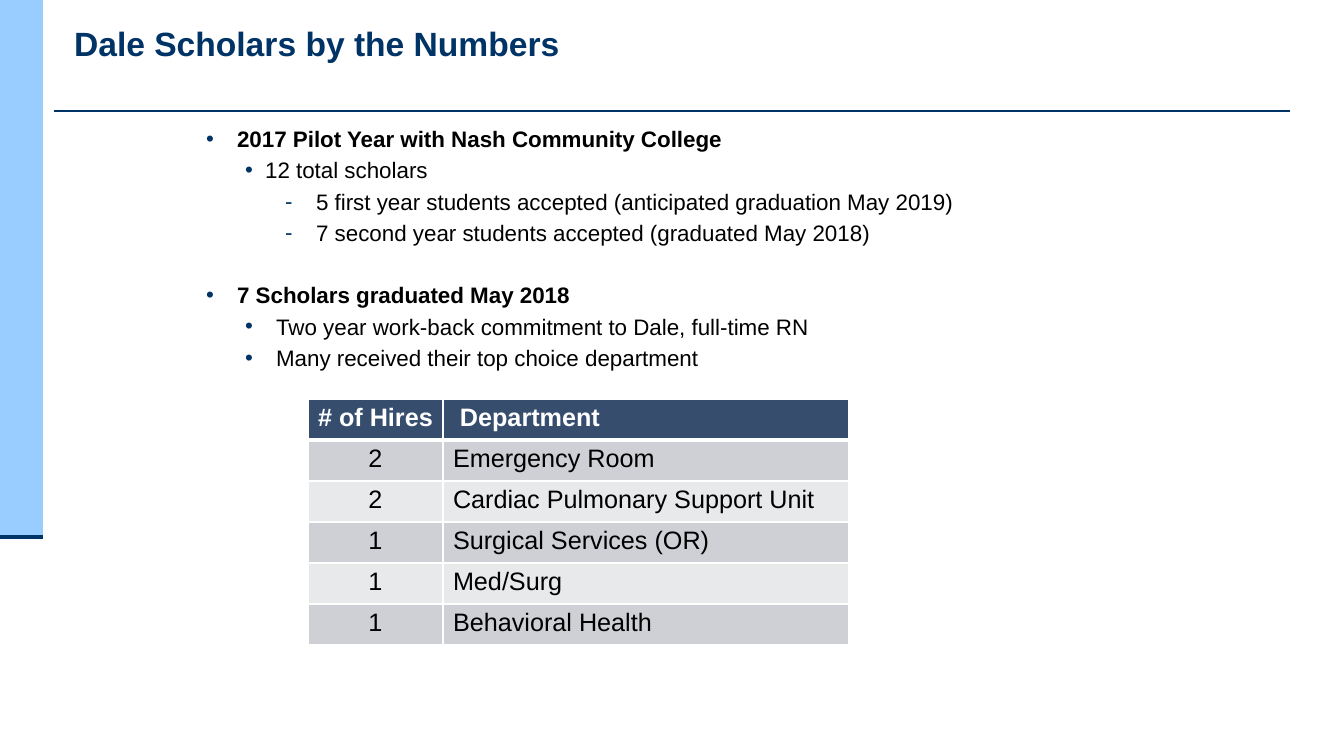
import pptx
import pptx.util
import pptx.dml.color
import pptx.enum.shapes
import pptx.enum.text
from lxml import etree
from dataclasses import dataclass

TITLE = "Dale Scholars by the Numbers"
# kind of line, text, space before in points
POINTS = [
    ("head", "2017 Pilot Year with Nash Community College", 0),
    ("total", "12 total scholars", 3.3),
    ("dash", "5 first year students accepted (anticipated graduation May 2019)", 3.3),
    ("dash", "7 second year students accepted (graduated May 2018)", 3.3),
    ("head", "7 Scholars graduated May 2018", 25),
    ("note", "Two year work-back commitment to Dale, full-time RN", 3.3),
    ("note", "Many received their top choice department", 3.3),
]
# level, text indent px, hanging px, bullet
KINDS = {
    "head": (0, 31, 31, "•"),
    "total": (1, 59, 20, "•"),
    "dash": (2, 110, 31, "-"),
    "note": (1, 70, 31, "•"),
}
HIRES = [
    ("# of Hires", "Department"),
    ("2", "Emergency Room"),
    ("2", "Cardiac Pulmonary Support Unit"),
    ("1", "Surgical Services (OR)"),
    ("1", "Med/Surg"),
    ("1", "Behavioral Health"),
]
COLS = (135, 406)
ROW = 41


@dataclass
class Theme:
    face: str = "Arial"
    navy: str = "003366"
    sky: str = "99CCFF"
    black: str = "000000"
    white: str = "FFFFFF"
    header: str = "364D6E"
    bands: tuple = ("CED0D5", "E8E9EB")
    title: int = 24
    body: int = 16
    cell: int = 18


theme = Theme()
ALIGN = pptx.enum.text.PP_ALIGN


def px(n):
    return pptx.util.Emu(round(n * 914400 / 100.8))


def rgb(code):
    return pptx.dml.color.RGBColor.from_string(code)


def place(shape, left, top, width, height):
    shape.left, shape.top = px(left), px(top)
    shape.width, shape.height = px(width), px(height)


def style(para, size, color, bold):
    font = para.font
    font.name, font.size, font.bold = theme.face, pptx.util.Pt(size), bold
    font.color.rgb = rgb(color)


def add(parent, tag, **attrs):
    return etree.SubElement(parent, pptx.oxml.ns.qn(tag), attrs)


def bullet(para, left, hang, mark):
    props = para._p.get_or_add_pPr()
    props.set("marL", str(px(left)))
    props.set("indent", str(-px(hang)))
    add(add(props, "a:buClr"), "a:srgbClr", val=theme.navy)
    add(props, "a:buFont", typeface=theme.face)
    add(props, "a:buChar", char=mark)


def border(cell, top, bottom):
    """Draw white cell edges; call before the cell is filled."""
    props = cell._tc.get_or_add_tcPr()
    for side, weight in zip("LRTB", (1, 1, top, bottom)):
        edge = add(props, f"a:ln{side}", w=str(pptx.util.Pt(weight)))
        add(add(edge, "a:solidFill"), "a:srgbClr", val=theme.white)


def rule(slide, left, right, top, weight):
    line = slide.shapes.add_connector(
        pptx.enum.shapes.MSO_CONNECTOR.STRAIGHT,
        px(left), px(top), px(right), px(top))
    line.line.color.rgb = rgb(theme.navy)
    line.line.width = pptx.util.Pt(weight)
    add(line._element.spPr, "a:effectLst")


def add_side(slide):
    bar = slide.shapes.add_shape(
        pptx.enum.shapes.MSO_SHAPE.RECTANGLE, 0, 0, px(43), px(537))
    bar.shadow.inherit = False
    bar.fill.solid()
    bar.fill.fore_color.rgb = rgb(theme.sky)
    bar.line.fill.background()
    rule(slide, 0, 43, 537, 3.5)
    rule(slide, 54, 1290, 111, 1.5)


def fill_text(slide):
    title, body = slide.placeholders
    place(title, 64, 18, 1216, 92)
    place(body, 196, 120, 958, 434)
    for box in (title, body):
        box.text_frame.auto_size = pptx.enum.text.MSO_AUTO_SIZE.NONE
        box.text_frame.vertical_anchor = pptx.enum.text.MSO_ANCHOR.TOP
    title.text_frame.text = TITLE
    para = title.text_frame.paragraphs[0]
    para.alignment = ALIGN.LEFT
    style(para, theme.title, theme.navy, True)

    body.text_frame.text = "\n".join(text for _, text, _ in POINTS)
    for para, (kind, _, gap) in zip(body.text_frame.paragraphs, POINTS):
        level, left, hang, mark = KINDS[kind]
        para.level = level
        bullet(para, left, hang, mark)
        para.space_before = pptx.util.Pt(gap)
        style(para, theme.body, theme.black, kind == "head")


def add_hires(slide):
    table = slide.shapes.add_table(
        len(HIRES), len(COLS), px(308), px(399),
        px(sum(COLS)), px(ROW * len(HIRES))).table
    for col, width in zip(table.columns, COLS):
        col.width = px(width)
    for r, row in enumerate(HIRES):
        head = r == 0
        for c, text in enumerate(row):
            cell = table.cell(r, c)
            border(cell, 3 if r == 1 else 1, 3 if head else 1)
            cell.fill.solid()
            cell.fill.fore_color.rgb = rgb(
                theme.header if head else theme.bands[(r - 1) % 2])
            if head and c == 1:
                cell.margin_left = px(17)
            cell.text = text
            para = cell.text_frame.paragraphs[0]
            para.alignment = ALIGN.LEFT if c else ALIGN.CENTER
            style(para, theme.cell, theme.white if head else theme.black, head)


def main():
    deck = pptx.Presentation()
    deck.slide_width, deck.slide_height = px(1344), px(756)
    slide = deck.slides.add_slide(deck.slide_layouts[1])
    add_side(slide)
    fill_text(slide)
    add_hires(slide)
    deck.save("out.pptx")


if __name__ == "__main__":
    main()
